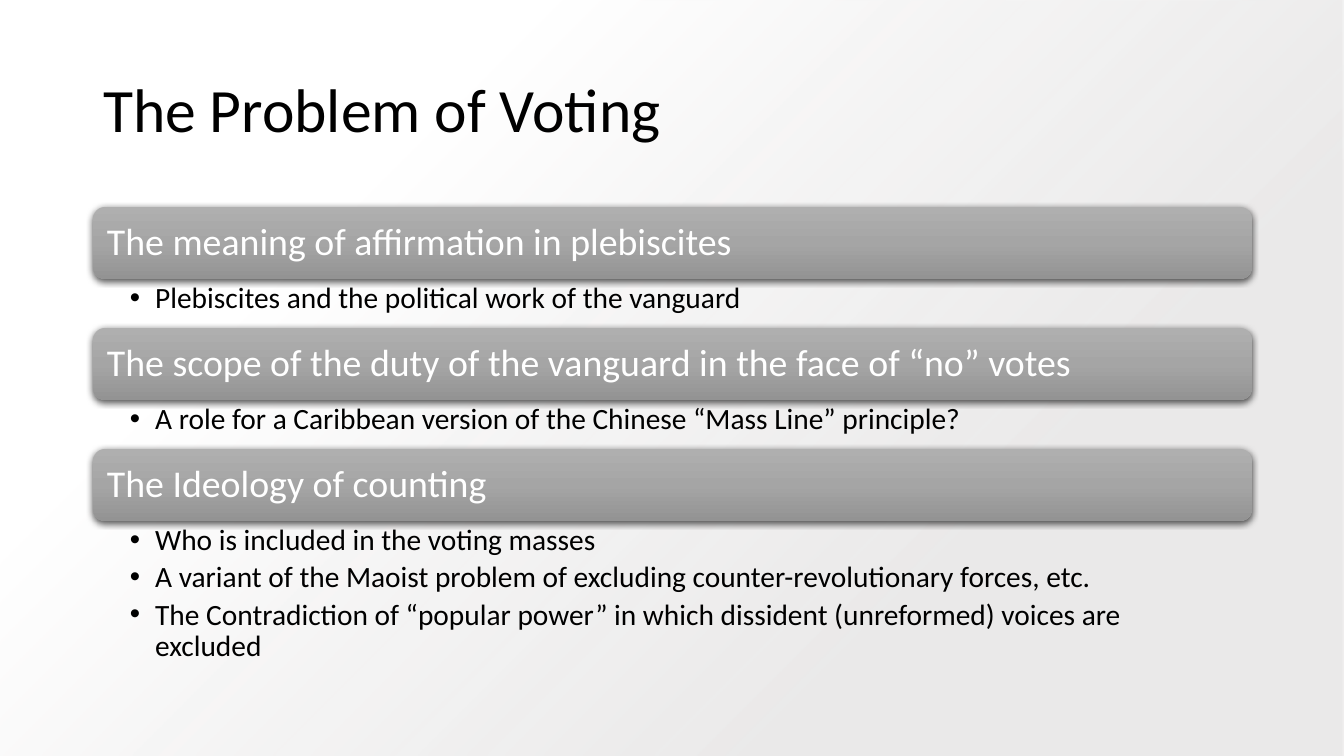
import pptx
import pptx.util
import pptx.dml.color
import pptx.enum.shapes
import pptx.enum.text
import pptx.oxml
import pptx.oxml.ns

PX = 12192000 / 1344
COLORS = {
    "text": "000000", "label": "FFFFFF", "white": "FFFFFF", "mist": "E7E6E6",
    "bar_top": "AFAFAF", "bar_mid": "A5A5A5", "bar_low": "939393", "shadow": "000000",
}
LEFT, WIDTH = 93, 1159
FIRST_TOP, BAR_HEIGHT = 207, 72
SECTIONS = [
    ("The meaning of affirmation in plebiscites", 49,
     ["Plebiscites and the political work of the vanguard"]),
    ("The scope of the duty of the vanguard in the face of “no” votes", 49,
     ["A role for a Caribbean version of the Chinese “Mass Line” principle?"]),
    ("The Ideology of counting", 154,
     ["Who is included in the voting masses",
      "A variant of the Maoist problem of excluding counter-revolutionary forces, etc.",
      "The Contradiction of “popular power” in which dissident (unreformed) voices are excluded"]),
]


def px(length):
    return pptx.util.Emu(round(length * PX))


def element(tag, body="", **attributes):
    listed = "".join(f' {name}="{value}"' for name, value in attributes.items())
    return pptx.oxml.parse_xml(
        f'<a:{tag} {pptx.oxml.ns.nsdecls("a")}{listed}>{body}</a:{tag}>')


class VotingSlide:
    font = "Calibri"
    line_spacing = 0.9

    def __init__(self, deck):
        self.slide = deck.slides.add_slide(deck.slide_layouts[5])
        self.shapes = self.slide.shapes

    def add_words(self, paragraph, words, size, color):
        paragraph.alignment = pptx.enum.text.PP_ALIGN.LEFT
        paragraph.line_spacing = self.line_spacing
        run = paragraph.add_run()
        run.text = words
        run.font.name = self.font
        run.font.size = pptx.util.Pt(size)
        run.font.color.rgb = pptx.dml.color.RGBColor.from_string(COLORS[color])

    def title(self, words, left, top, width, height):
        heading = self.shapes.title
        heading.left, heading.top = px(left), px(top)
        heading.width, heading.height = px(width), px(height)
        frame = heading.text_frame
        frame.word_wrap = True
        frame.auto_size = pptx.enum.text.MSO_AUTO_SIZE.NONE
        frame.vertical_anchor = pptx.enum.text.MSO_ANCHOR.MIDDLE
        self.add_words(frame.paragraphs[0], words, 44, "text")

    def gradient_shape(self, kind, box, stops, direction):
        shape = self.shapes.add_shape(kind, *map(px, box))
        shape.shadow.inherit = False
        shape.line.fill.background()
        listed = "".join(
            f'<a:gs pos="{place * 1000}"><a:srgbClr val="{COLORS[color]}">'
            f'<a:alpha val="{opacity * 1000}"/></a:srgbClr></a:gs>'
            for place, color, opacity in stops)
        outline = shape.element.spPr.find(pptx.oxml.ns.qn("a:prstGeom"))
        outline.addnext(element("gradFill", f"<a:gsLst>{listed}</a:gsLst>{direction}",
                                rotWithShape=1))
        return shape

    def backdrop(self):
        glow = self.gradient_shape(
            pptx.enum.shapes.MSO_SHAPE.RECTANGLE, (0, 0, 1344, 756),
            [(28, "mist", 84), (74, "white", 100)],
            '<a:path path="circle"><a:fillToRect l="100000" t="100000"/></a:path>'
            '<a:tileRect r="-100000" b="-100000"/>')
        self.shapes.element.insert(2, glow.element)

    def bar(self, top):
        bar = self.gradient_shape(
            pptx.enum.shapes.MSO_SHAPE.ROUNDED_RECTANGLE, (LEFT, top, WIDTH, BAR_HEIGHT),
            [(0, "bar_top", 100), (50, "bar_mid", 100), (100, "bar_low", 100)],
            '<a:lin ang="5400000" scaled="0"/>')
        effects = bar.element.spPr.find(pptx.oxml.ns.qn("a:effectLst"))
        effects.append(element(
            "outerShdw",
            f'<a:srgbClr val="{COLORS["shadow"]}"><a:alpha val="63000"/></a:srgbClr>',
            blurRad=57150, dist=19050, dir=5400000, algn="ctr", rotWithShape=0))

    def text_frame(self, box, insets, anchor):
        frame = self.shapes.add_textbox(*map(px, box)).text_frame
        frame.word_wrap = True
        frame.vertical_anchor = anchor
        (frame.margin_left, frame.margin_top,
         frame.margin_right, frame.margin_bottom) = map(px, insets)
        return frame

    def bar_label(self, words, top):
        frame = self.text_frame((LEFT + 3, top + 4, WIDTH - 6, BAR_HEIGHT - 8),
                                (11, 11, 11, 11), pptx.enum.text.MSO_ANCHOR.MIDDLE)
        self.add_words(frame.paragraphs[0], words, 27, "label")

    def bullets(self, points, top, height):
        frame = self.text_frame((LEFT, top, WIDTH, height), (37, 4, 21, 4),
                                pptx.enum.text.MSO_ANCHOR.TOP)
        for number, point in enumerate(points):
            paragraph = frame.add_paragraph() if number else frame.paragraphs[0]
            paragraph.level = 1
            properties = paragraph._p.get_or_add_pPr()
            properties.set("marL", "228600")
            properties.set("indent", "-228600")
            properties.append(element("buFont", typeface="Arial"))
            properties.append(element("buChar", char="•"))
            paragraph.space_after = pptx.util.Pt(4)
            self.add_words(paragraph, point, 21, "text")


def main():
    deck = pptx.Presentation()
    deck.slide_width, deck.slide_height = px(1344), px(756)
    voting = VotingSlide(deck)
    voting.backdrop()
    voting.title("The Problem of Voting", LEFT, 40, WIDTH, 146)
    top = FIRST_TOP
    for heading, points_height, points in SECTIONS:
        voting.bar(top)
        voting.bar_label(heading, top)
        voting.bullets(points, top + BAR_HEIGHT, points_height)
        top += BAR_HEIGHT + points_height
    deck.save("out.pptx")


if __name__ == "__main__":
    main()
